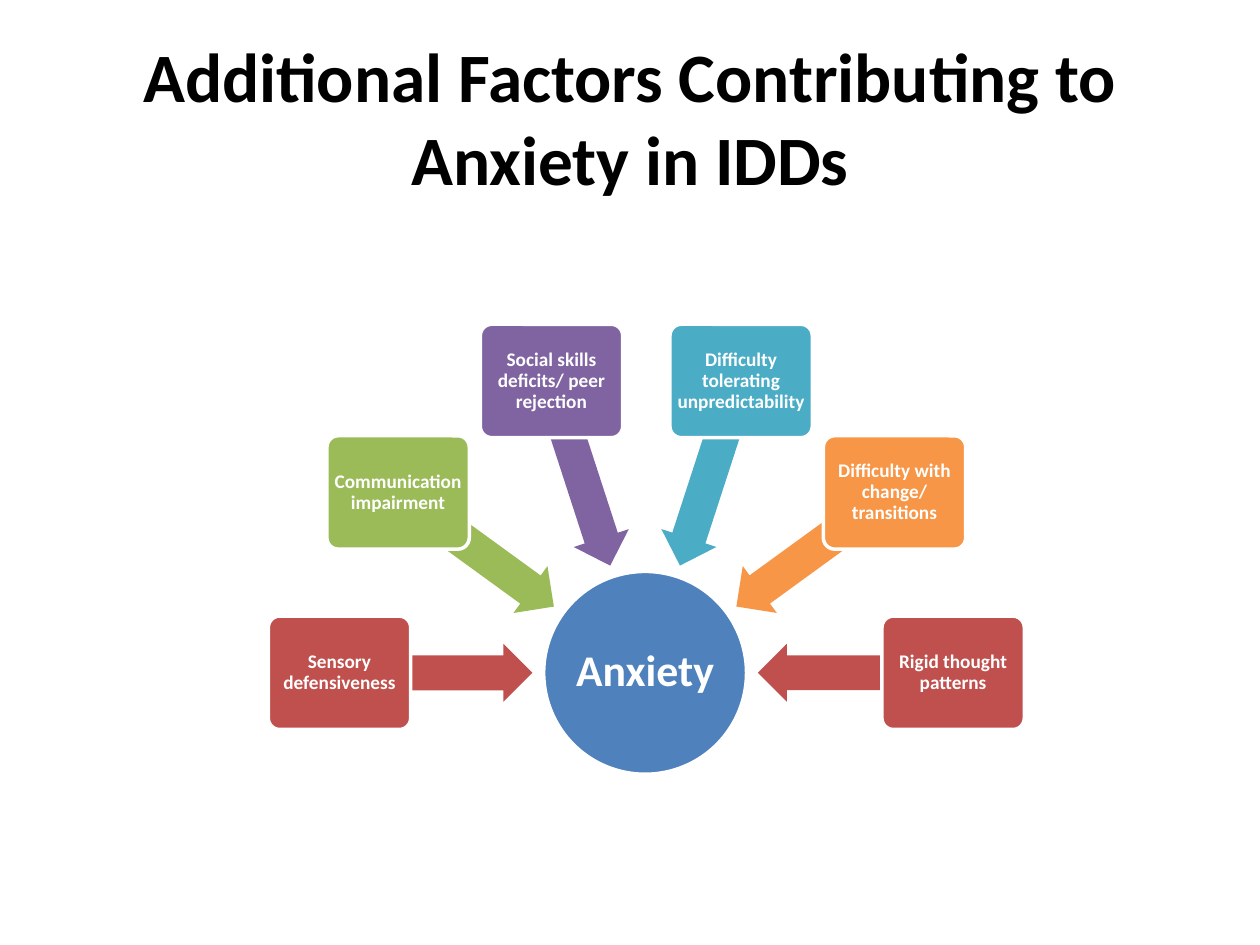
"""Build a slide with six factors fanned around a central anxiety hub."""
import math
from dataclasses import dataclass

import pptx
import pptx.dml.color
import pptx.enum.shapes
import pptx.enum.text
import pptx.util

Inches = pptx.util.Inches
Shape = pptx.enum.shapes.MSO_SHAPE


@dataclass(frozen=True)
class Theme:
    font: str = "Calibri"
    black: str = "000000"
    white: str = "FFFFFF"
    blue: str = "4F81BD"
    red: str = "C0504D"
    green: str = "9BBB59"
    purple: str = "8064A2"
    teal: str = "4BACC6"
    orange: str = "F79646"
    title_size: float = 39.6
    hub_size: float = 25
    factor_size: float = 11
    outline: float = 2


@dataclass(frozen=True)
class Factor:
    text: str
    color: str


THEME = Theme()
FACTORS = (
    Factor("Sensory defensiveness", THEME.red),
    Factor("Communication impairment", THEME.green),
    Factor("Social skills deficits/ peer rejection", THEME.purple),
    Factor("Difficulty tolerating unpredictability", THEME.teal),
    Factor("Difficulty with change/ transitions", THEME.orange),
    Factor("Rigid thought patterns", THEME.red),
)
HUB_X, HUB_Y, HUB_SIZE = 5.12, 5.34, 1.61
BOX_X, BOX_RADIUS, BOX_W, BOX_H = 5.13, 2.435, 1.13, 0.9
ARROW_RADIUS, ARROW_W, ARROW_H = 1.665, 1.54, 0.46


def rgb(color: str) -> pptx.dml.color.RGBColor:
    return pptx.dml.color.RGBColor.from_string(color)


def write(sp, text: str, *, size: float, color: str = THEME.white,
          inset: float = 0.02, spacing: float = 0.9) -> None:
    tf = sp.text_frame
    tf.word_wrap = True
    tf.auto_size = pptx.enum.text.MSO_AUTO_SIZE.NONE
    tf.vertical_anchor = pptx.enum.text.MSO_ANCHOR.MIDDLE
    tf.margin_left = tf.margin_right = Inches(inset)
    tf.margin_top = tf.margin_bottom = Inches(inset)
    p = tf.paragraphs[0]
    p.alignment = pptx.enum.text.PP_ALIGN.CENTER
    p.line_spacing = spacing
    r = p.add_run()
    r.text = text
    r.font.name = THEME.font
    r.font.size = pptx.util.Pt(size)
    r.font.bold = True
    r.font.color.rgb = rgb(color)


def add_centered(s, kind: Shape, x: float, y: float, w: float, h: float,
                 color: str, outlined: bool = True):
    sp = s.shapes.add_shape(
        kind, Inches(x - w / 2), Inches(y - h / 2), Inches(w), Inches(h))
    sp.shadow.inherit = False
    sp.fill.solid()
    sp.fill.fore_color.rgb = rgb(color)
    if outlined:
        sp.line.color.rgb = rgb(THEME.white)
        sp.line.width = pptx.util.Pt(THEME.outline)
    else:
        sp.line.fill.background()
    return sp


def add_hub(s) -> None:
    hub = add_centered(s, Shape.OVAL, HUB_X, HUB_Y, HUB_SIZE, HUB_SIZE, THEME.blue)
    write(hub, "Anxiety", size=THEME.hub_size)


def add_factor(s, factor: Factor, degrees: float) -> None:
    dx, dy = math.cos(math.radians(degrees)), math.sin(math.radians(degrees))
    arrow = add_centered(
        s, Shape.LEFT_ARROW, HUB_X + ARROW_RADIUS * dx, HUB_Y + ARROW_RADIUS * dy,
        ARROW_W, ARROW_H, factor.color, outlined=False)
    arrow.adjustments[0] = 0.6
    arrow.adjustments[1] = 0.5
    arrow.rotation = degrees
    box = add_centered(
        s, Shape.ROUNDED_RECTANGLE, BOX_X + BOX_RADIUS * dx, HUB_Y + BOX_RADIUS * dy,
        BOX_W, BOX_H, factor.color)
    box.adjustments[0] = 0.1
    write(box, factor.text, size=THEME.factor_size)


def main() -> None:
    prs = pptx.Presentation()
    prs.slide_width, prs.slide_height = Inches(10), Inches(7.5)
    s = prs.slides.add_slide(prs.slide_layouts[5])
    title = s.shapes.title
    title.left, title.top = Inches(0.5), Inches(0.3)
    title.width, title.height = Inches(9), Inches(1.25)
    write(title, "Additional Factors Contributing to Anxiety in IDDs",
          size=THEME.title_size, color=THEME.black, inset=0.05, spacing=1.0)
    add_hub(s)
    step = 180 / (len(FACTORS) - 1)
    for i, factor in enumerate(FACTORS):
        add_factor(s, factor, 180 + i * step)
    prs.save("out.pptx")


if __name__ == "__main__":
    main()
